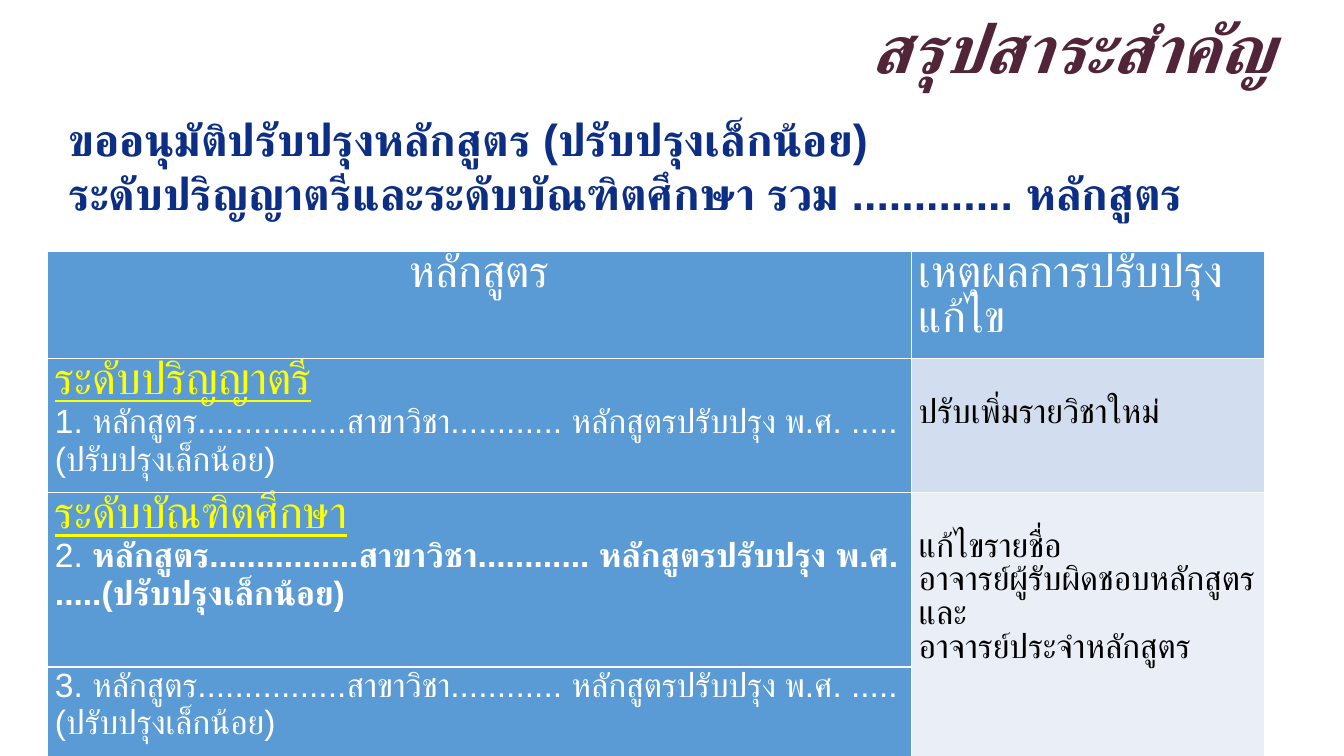
from dataclasses import dataclass

from lxml import etree
from pptx import Presentation
from pptx.dml.color import RGBColor
from pptx.enum.text import MSO_ANCHOR, MSO_AUTO_SIZE, PP_ALIGN
from pptx.oxml.ns import qn
from pptx.util import Pt

LEFT, CENTER = PP_ALIGN.LEFT, PP_ALIGN.CENTER
TOP, MIDDLE = MSO_ANCHOR.TOP, MSO_ANCHOR.MIDDLE
NO_FIT = MSO_AUTO_SIZE.NONE


@dataclass(frozen=True)
class Theme:
    font: str = "Arial"
    white: str = "FFFFFF"
    black: str = "000000"
    plum: str = "522438"
    navy: str = "0C2E84"
    blue: str = "5B9BD5"
    pale: str = "D2DEEF"
    paler: str = "EAEFF7"
    yellow: str = "FFFF00"
    title: int = 48
    heading: int = 32
    text: int = 24


THEME = Theme()


def add_run(p, text, size=THEME.text, color=THEME.white, bold=False,
            italic=False, underline=False):
    r = p.add_run()
    r.text = text
    f = r.font
    f.name, f.size, f.color.rgb = THEME.font, Pt(size), RGBColor.from_string(color)
    f.bold, f.italic, f.underline = bold, italic, underline


def fill_text(tf, paragraphs, align=LEFT):
    for i, runs in enumerate(paragraphs):
        p = tf.paragraphs[0] if i == 0 else tf.add_paragraph()
        p.alignment = align
        p.line_spacing = 1.0
        p.space_before = p.space_after = Pt(0)
        for text, style in runs:
            add_run(p, text, **style)


class SlideBuilder:
    def __init__(self, prs, theme):
        self.theme = theme
        self.s = prs.slides.add_slide(prs.slide_layouts[1])

    def placeholder(self, index, box, paragraphs, align=LEFT, right=7.2, bottom=3.6,
                    outlined=False):
        sp = self.s.placeholders[index]
        sp.left, sp.top, sp.width, sp.height = map(Pt, box)
        white = RGBColor.from_string(self.theme.white)
        sp.fill.solid()
        sp.fill.fore_color.rgb = white
        if outlined:
            sp.line.color.rgb = white
            sp.line.width = Pt(0.75)
        tf = sp.text_frame
        tf.word_wrap, tf.auto_size = True, NO_FIT
        tf.vertical_anchor = MIDDLE
        tf.margin_right, tf.margin_bottom = Pt(right), Pt(bottom)
        fill_text(tf, paragraphs, align)
        for p in tf.paragraphs:
            pPr = p._p.get_or_add_pPr()
            pPr.set("marL", "0")
            pPr.set("indent", "0")
            etree.SubElement(pPr, qn("a:buNone"))

    def table(self, left, top, widths, heights):
        t = self.s.shapes.add_table(len(heights), len(widths), Pt(left), Pt(top),
                                    Pt(sum(widths)), Pt(sum(heights))).table
        t.first_row = t.horz_banding = False
        for column, width in zip(t.columns, widths):
            column.width = Pt(width)
        for row, height in zip(t.rows, heights):
            row.height = Pt(height)
        return t

    def cell(self, cell, paragraphs, fill, align=LEFT, top=0):
        cell.fill.solid()
        cell.fill.fore_color.rgb = RGBColor.from_string(fill)
        cell.margin_left = cell.margin_right = Pt(5.3)
        cell.margin_top, cell.margin_bottom = Pt(top), Pt(0)
        cell.vertical_anchor = TOP
        fill_text(cell.text_frame, paragraphs, align)


def main():
    prs = Presentation()
    prs.slide_width, prs.slide_height = Pt(960), Pt(540)
    th = THEME
    b = SlideBuilder(prs, th)

    title = dict(size=th.title, color=th.plum, bold=True, italic=True)
    b.placeholder(0, (604, 1.5, 354, 70.5), [[("สรุปสาระสำคัญ", title)]], CENTER,
                  right=36.5, bottom=10, outlined=True)

    lead = dict(size=th.heading, color=th.navy, bold=True)
    b.placeholder(1, (41.8, 76.5, 862, 85), [
        [("ขออนุมัติปรับปรุงหลักสูตร (ปรับปรุงเล็กน้อย)", lead)],
        [("ระดับปริญญาตรีและระดับบัณฑิตศึกษา รวม ............. หลักสูตร", lead)],
    ], bottom=4.6)

    t = b.table(34, 179.5, (617, 252), (76.5, 96, 124.5, 70))
    t.cell(2, 1).merge(t.cell(3, 1))

    header = dict(size=th.heading)
    level = dict(size=th.heading, color=th.yellow, underline=True)
    reason = dict(color=th.black)
    course = ("หลักสูตร................สาขาวิชา............ "
              "หลักสูตรปรับปรุง พ.ศ. .....(ปรับปรุงเล็กน้อย)")

    b.cell(t.cell(0, 0), [[("หลักสูตร", header)]], th.blue, CENTER)
    b.cell(t.cell(0, 1), [[("เหตุผลการปรับปรุงแก้ไข", header)]], th.blue)

    courses = [
        [[("ระดับปริญญาตรี", level)], [("1. " + course, {})]],
        [[("ระดับบัณฑิตศึกษา", level)], [("2. ", {}), (course, dict(bold=True))]],
        [[("3. " + course, {})]],
    ]
    for row, paragraphs in enumerate(courses, 1):
        b.cell(t.cell(row, 0), paragraphs, th.blue)

    reasons = [
        (["ปรับเพิ่มรายวิชาใหม่"], th.pale),
        (["แก้ไขรายชื่อ", "อาจารย์ผู้รับผิดชอบหลักสูตรและ", "อาจารย์ประจำหลักสูตร"], th.paler),
    ]
    for row, (lines, fill) in enumerate(reasons, 1):
        b.cell(t.cell(row, 1), [[(line, reason)] for line in lines], fill, top=27)

    prs.save("out.pptx")


if __name__ == "__main__":
    main()
